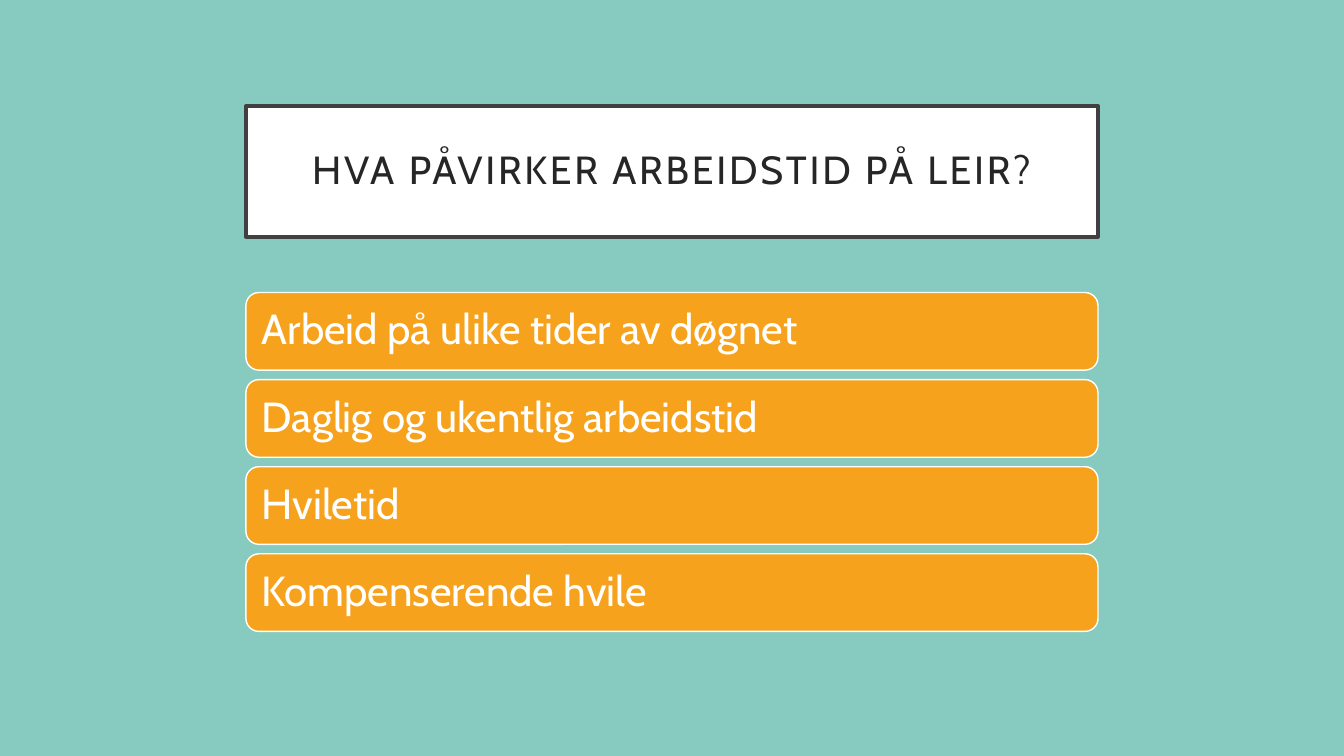
"""Build a slide with a framed title above four rounded bars."""
from dataclasses import dataclass
from typing import Any

from pptx import Presentation, util as u
from pptx.dml.color import RGBColor
from pptx.enum import shapes, text

WIDE, HIGH = u.Inches(13.33), u.Inches(7.5)
COL, ROW = WIDE / 100, HIGH / 100
LEFT, SPAN = 18.3, 63.4
TOP, TALL, STEP = 38.7, 10.27, 11.52


@dataclass(frozen=True)
class Theme:
    back: str = "86CAC0"
    white: str = "FFFFFF"
    frame: str = "404040"
    ink: str = "262626"
    bar: str = "F6A21D"
    face: str = "Cabin"
    head: float = 28
    body: float = 30


@dataclass(frozen=True)
class Style:
    kind: Any
    fill: str
    edge: str
    line: float
    ink: str
    size: float
    align: Any
    inset: float
    track: int = 0


@dataclass(frozen=True)
class Box:
    words: str
    top: float
    tall: float
    style: Style


THEME = Theme()
HEAD = Style(shapes.MSO_SHAPE.RECTANGLE, THEME.white, THEME.frame, 2.5,
             THEME.ink, THEME.head, text.PP_ALIGN.CENTER, 0.2, 200)
BAR = Style(shapes.MSO_SHAPE.ROUNDED_RECTANGLE, THEME.bar, THEME.white, 1,
            THEME.white, THEME.body, text.PP_ALIGN.LEFT, 0.12)
TOPICS = (
    "Arbeid på ulike tider av døgnet",
    "Daglig og ukentlig arbeidstid",
    "Hviletid",
    "Kompenserende hvile",
)


def apply(item: Any, form: dict[str, Any]) -> None:
    """Set each format value on an item."""
    for name, value in form.items():
        setattr(item, name, value)


def paint(fill: Any, tint: str) -> None:
    """Give a fill one solid colour."""
    fill.solid()
    fill.fore_color.rgb = RGBColor.from_string(tint)


def draw(slide: Any, box: Box) -> None:
    """Draw one box with its text."""
    style = box.style
    shape = slide.shapes.add_shape(
        style.kind, round(LEFT * COL), round(box.top * ROW),
        round(SPAN * COL), round(box.tall * ROW))
    shape.shadow.inherit = False
    paint(shape.fill, style.fill)
    paint(shape.line.fill, style.edge)
    shape.line.width = u.Pt(style.line)
    frame = shape.text_frame
    sides = ("left", "top", "right", "bottom")
    apply(frame, {f"margin_{side}": u.Inches(style.inset) for side in sides})
    apply(frame, {"word_wrap": True,
                  "vertical_anchor": text.MSO_ANCHOR.MIDDLE})
    para = frame.paragraphs[0]
    apply(para, {"alignment": style.align, "line_spacing": 0.9})
    run = para.add_run()
    run.text = box.words
    apply(run.font, {"name": THEME.face, "size": u.Pt(style.size)})
    paint(run.font.fill, style.ink)
    if style.track:
        run.font._element.set("spc", str(style.track))


def main() -> None:
    """Build and save the slide."""
    deck = Presentation()
    apply(deck, {"slide_width": WIDE, "slide_height": HIGH})
    slide = deck.slides.add_slide(deck.slide_layouts[6])
    paint(slide.background.fill, THEME.back)
    draw(slide, Box("HVA PÅVIRKER ARBEIDSTID PÅ LEIR?", 14, 17.33, HEAD))
    for row, words in enumerate(TOPICS):
        draw(slide, Box(words, TOP + row * STEP, TALL, BAR))
    deck.save("out.pptx")


if __name__ == "__main__":
    main()
